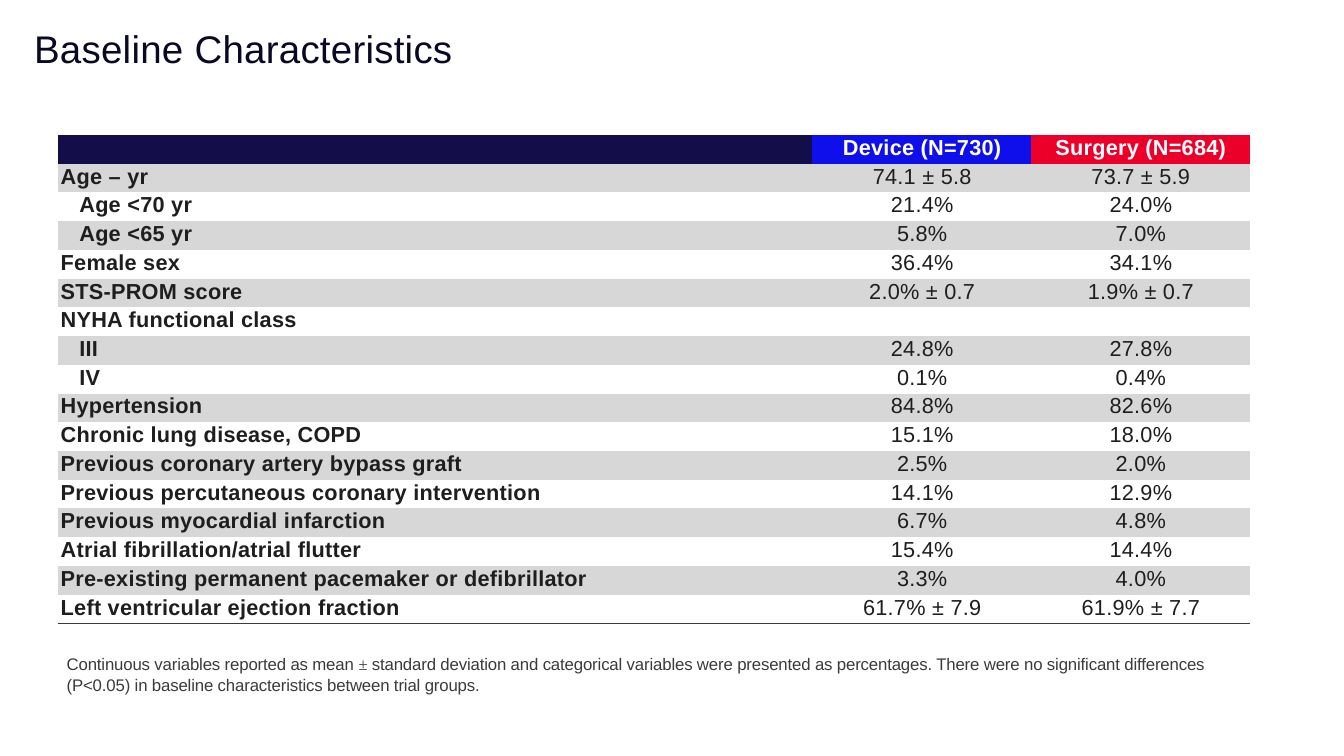
from lxml.etree import SubElement
from pptx import Presentation
from pptx.dml.color import RGBColor
from pptx.enum.text import MSO_ANCHOR, MSO_AUTO_SIZE, PP_ALIGN
from pptx.oxml.ns import qn
from pptx.util import Cm, Pt

INK, GREY, WHITE, BAND = "1E1E1E", "3B3B3B", "FFFFFF", "D7D7D7"
HEADER_FILLS = ("130E4A", "0F0FEB", "EC002A")
COLUMN_WIDTHS = (19.02, 5.51, 5.51)
BODY_SIZE = 15.5
PLAIN_STYLE = "{2D5ABB26-0587-4C30-8999-92F81FD0307C}"
HEADINGS = ("", "Device (N=730)", "Surgery (N=684)")
SUBGROUPS = ("Age <70 yr", "Age <65 yr", "III", "IV")
CHARACTERISTICS = (
    ("Age – yr", "74.1 ± 5.8", "73.7 ± 5.9"),
    ("Age <70 yr", "21.4%", "24.0%"),
    ("Age <65 yr", "5.8%", "7.0%"),
    ("Female sex", "36.4%", "34.1%"),
    ("STS-PROM score", "2.0% ± 0.7", "1.9% ± 0.7"),
    ("NYHA functional class", "", ""),
    ("III", "24.8%", "27.8%"),
    ("IV", "0.1%", "0.4%"),
    ("Hypertension", "84.8%", "82.6%"),
    ("Chronic lung disease, COPD", "15.1%", "18.0%"),
    ("Previous coronary artery bypass graft", "2.5%", "2.0%"),
    ("Previous percutaneous coronary intervention", "14.1%", "12.9%"),
    ("Previous myocardial infarction", "6.7%", "4.8%"),
    ("Atrial fibrillation/atrial flutter", "15.4%", "14.4%"),
    ("Pre-existing permanent pacemaker or defibrillator", "3.3%", "4.0%"),
    ("Left ventricular ejection fraction", "61.7% ± 7.9", "61.9% ± 7.7"),
)
FOOTNOTE = (
    ("Continuous variables reported as mean ", "Arial"),
    ("± ", "Times New Roman"),
    ("standard deviation and categorical variables were presented as "
     "percentages. There were no significant differences (P<0.05) in "
     "baseline characteristics between trial groups.", "Arial"),
)


def colour(value):
    """Turn a hex string into a colour."""
    return RGBColor.from_string(value)


def apply(target, formats):
    """Set every attribute named in a dict of format values."""
    for name, value in formats.items():
        setattr(target, name, value)


def add_span(para, text, size, ink, bold=False, face="Arial", spacing=0.2):
    """Append a formatted run with letter spacing in points."""
    span = para.add_run()
    span.text = text
    apply(span.font, {"name": face, "size": Pt(size), "bold": bold})
    span.font.color.rgb = colour(ink)
    span.font._element.set("spc", str(round(spacing * 100)))


def set_frame(frame):
    """Give a text frame tight margins, wrapping and top alignment."""
    apply(frame, {
        "margin_left": 0, "margin_right": 0, "margin_bottom": 0,
        "margin_top": Cm(0.04), "word_wrap": True,
        "auto_size": MSO_AUTO_SIZE.NONE, "vertical_anchor": MSO_ANCHOR.TOP,
    })


def set_title(page, text):
    """Place and format the slide title."""
    title = page.shapes.title
    apply(title, {"left": Cm(0.86), "top": Cm(0.59),
                  "width": Cm(12), "height": Cm(1.24)})
    set_frame(title.text_frame)
    para = title.text_frame.paragraphs[0]
    para.alignment = PP_ALIGN.LEFT
    add_span(para, text, 27.5, "090825")


def fill_cell(cell, text, fill, ink, bold, align, indent):
    """Write one table cell and set its fill."""
    apply(cell, {"margin_left": Cm(indent), "margin_right": 0,
                 "margin_top": Cm(0.02), "margin_bottom": 0,
                 "vertical_anchor": MSO_ANCHOR.TOP})
    if fill:
        cell.fill.solid()
        cell.fill.fore_color.rgb = colour(fill)
    else:
        cell.fill.background()
    para = cell.text_frame.paragraphs[0]
    para.alignment = align
    if text:
        add_span(para, text, BODY_SIZE, ink, bold)
    else:
        SubElement(para._p, qn("a:endParaRPr"), sz=str(round(BODY_SIZE * 100)))


def underline_cell(cell):
    """Draw a one-point line along the bottom of a cell."""
    properties = cell._tc.get_or_add_tcPr()
    line = SubElement(properties, qn("a:lnB"), w=str(Pt(1)))
    paint = SubElement(line, qn("a:solidFill"))
    SubElement(paint, qn("a:srgbClr"), val=GREY)
    properties.insert(0, line)


def add_characteristics(page):
    """Add the table comparing the two trial groups."""
    frame = page.shapes.add_table(
        len(CHARACTERISTICS) + 1, len(HEADINGS), Cm(1.45), Cm(3.4),
        Cm(sum(COLUMN_WIDTHS)), Cm(12.32))
    table = frame.table
    apply(table, {"first_row": False, "horz_banding": False})
    table._tbl.tblPr.find(qn("a:tableStyleId")).text = PLAIN_STYLE
    for column, width in zip(table.columns, COLUMN_WIDTHS):
        column.width = Cm(width)
    for index, (heading, fill) in enumerate(zip(HEADINGS, HEADER_FILLS)):
        fill_cell(table.cell(0, index), heading, fill, WHITE, True,
                  PP_ALIGN.CENTER, 0.03)
    for row, values in enumerate(CHARACTERISTICS, 1):
        fill = BAND if row % 2 else None
        label_indent = 0.55 if values[0] in SUBGROUPS else 0.08
        for index, value in enumerate(values):
            is_label = index == 0
            fill_cell(table.cell(row, index), value, fill, INK, is_label,
                      PP_ALIGN.LEFT if is_label else PP_ALIGN.CENTER,
                      label_indent if is_label else 0.03)
    for index in range(len(HEADINGS)):
        underline_cell(table.cell(len(CHARACTERISTICS), index))


def add_footnote(page):
    """Add the note under the table."""
    box = page.shapes.add_textbox(Cm(1.68), Cm(16.41), Cm(29.31), Cm(1.12))
    set_frame(box.text_frame)
    para = box.text_frame.paragraphs[0]
    para.line_spacing = 1.04
    for text, face in FOOTNOTE:
        add_span(para, text, 12, GREY, face=face, spacing=-0.1)


def main():
    """Build the baseline characteristics slide."""
    deck = Presentation()
    apply(deck, {"slide_width": Cm(33.87), "slide_height": Cm(19.05)})
    page = deck.slides.add_slide(deck.slide_layouts[5])
    set_title(page, "Baseline Characteristics")
    add_characteristics(page)
    add_footnote(page)
    deck.save("out.pptx")


if __name__ == "__main__":
    main()
